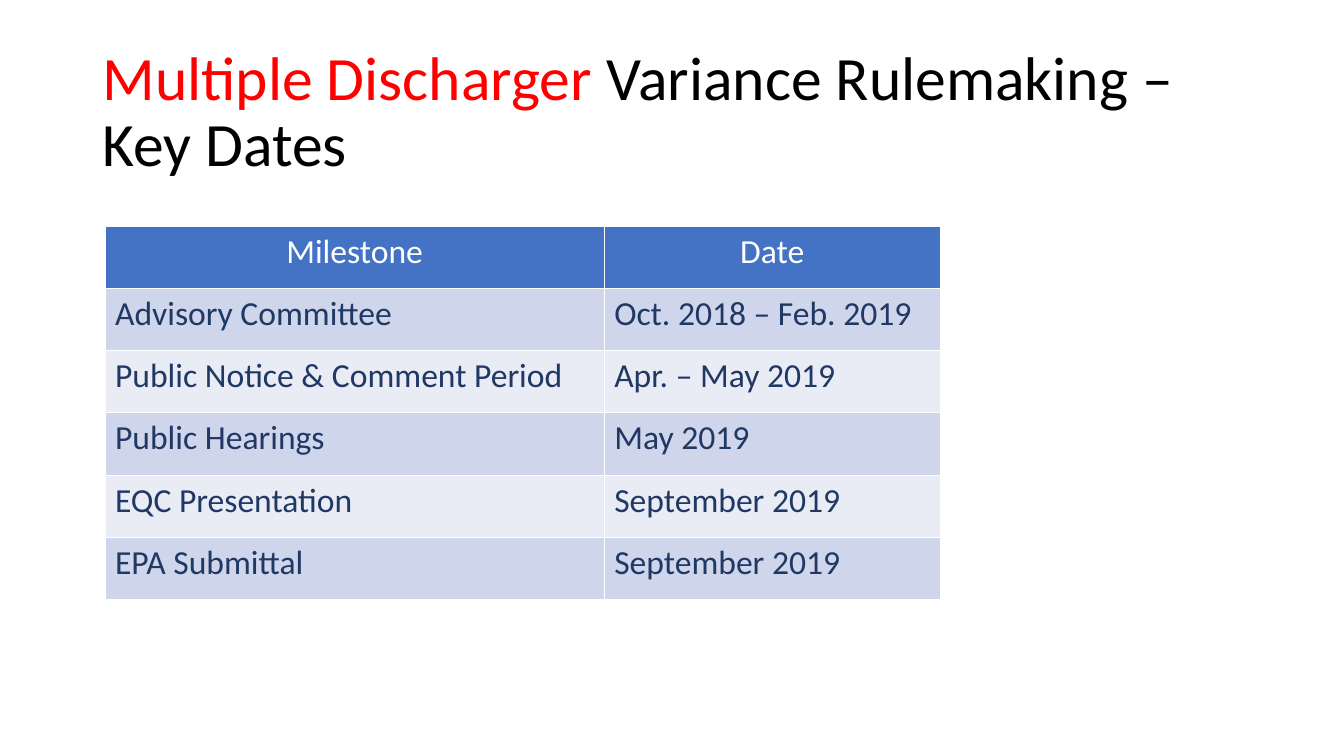
"""Build the rulemaking key dates slide."""
from pptx import Presentation
from pptx.dml.color import RGBColor
from pptx.enum.text import MSO_ANCHOR, MSO_AUTO_SIZE, PP_ALIGN
from pptx.util import Pt

TITLE = [("Multiple Discharger ", "accent"), ("Variance Rulemaking – Key Dates", "title")]
ROWS = [
    ("Milestone", "Date"),
    ("Advisory Committee", "Oct. 2018 – Feb. 2019"),
    ("Public Notice & Comment Period", "Apr. – May 2019"),
    ("Public Hearings", "May 2019"),
    ("EQC Presentation", "September 2019"),
    ("EPA Submittal", "September 2019"),
]
THEME = {
    "font": "Calibri", "title_size": 44, "table_size": 24,
    "accent": "FF0000", "title": "000000",
    "header": "FFFFFF", "body": "203864",
    "header_fill": "4472C4", "bands": ("E9EBF5", "CFD5EA"),
}
TITLE_BOX = {"left": 66, "top": 28.75, "width": 828, "height": 104.4}
TABLE_LEFT, TABLE_TOP, ROW_H = 75, 161.5, 44.5
COL_W = (356.6, 240)


def add_run(p, text, size, color):
    r = p.add_run()
    r.text = text
    fmt = {"name": THEME["font"], "size": Pt(THEME[size]), "bold": False}
    for key, value in fmt.items():
        setattr(r.font, key, value)
    r.font.color.rgb = RGBColor.from_string(THEME[color])


def add_title(s):
    sp = s.shapes.title
    for key, value in TITLE_BOX.items():
        setattr(sp, key, Pt(value))
    tf = sp.text_frame
    fmt = {"word_wrap": True, "auto_size": MSO_AUTO_SIZE.NONE,
           "vertical_anchor": MSO_ANCHOR.MIDDLE}
    for key, value in fmt.items():
        setattr(tf, key, value)
    p = tf.paragraphs[0]
    p.alignment, p.line_spacing = PP_ALIGN.LEFT, 0.9
    for text, color in TITLE:
        add_run(p, text, "title_size", color)


def add_dates(s):
    table = s.shapes.add_table(
        len(ROWS), len(COL_W), Pt(TABLE_LEFT), Pt(TABLE_TOP),
        Pt(sum(COL_W)), Pt(ROW_H * len(ROWS))).table
    for col, width in zip(table.columns, COL_W):
        col.width = Pt(width)
    for i, row in enumerate(ROWS):
        fill = THEME["bands"][i % 2] if i else THEME["header_fill"]
        for j, text in enumerate(row):
            cell = table.cell(i, j)
            cell.fill.solid()
            cell.fill.fore_color.rgb = RGBColor.from_string(fill)
            p = cell.text_frame.paragraphs[0]
            p.alignment = PP_ALIGN.LEFT if i else PP_ALIGN.CENTER
            add_run(p, text, "table_size", "body" if i else "header")


def main():
    prs = Presentation()
    prs.slide_width, prs.slide_height = Pt(960), Pt(540)
    s = prs.slides.add_slide(prs.slide_layouts[5])
    add_title(s)
    add_dates(s)
    prs.save("out.pptx")


if __name__ == "__main__":
    main()
